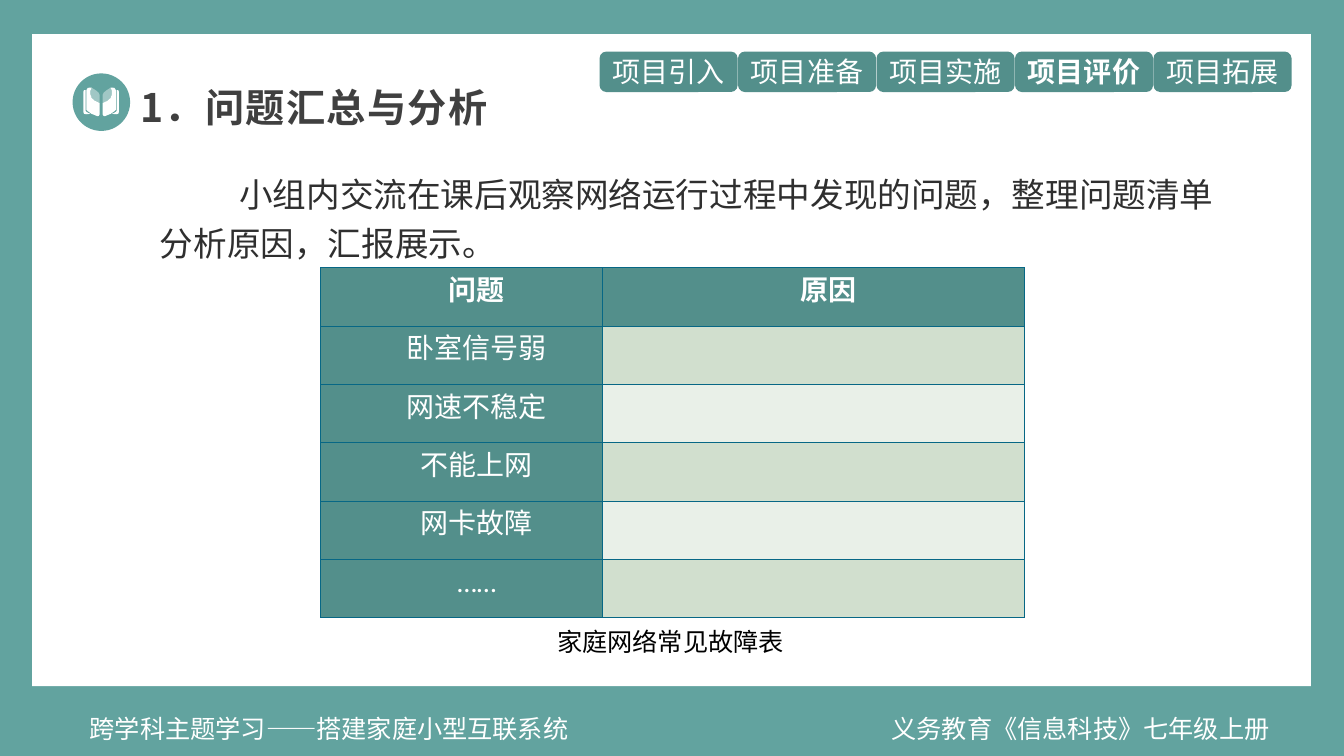
import pptx
import pptx.dml.color
import pptx.enum.shapes
import pptx.enum.text
import pptx.oxml
import pptx.oxml.ns
import pptx.util
from pptx.util import Cm

COLORS = {
    "frame": "62A39F", "tab": "538F8B", "white": "FFFFFF", "title": "404040",
    "body": "2F2F2F", "black": "000000", "border": "076785",
    "band_dark": "D1DFCE", "band_light": "E9F0E8",
}
SANS = "Noto Sans CJK SC"
NAMESPACE = pptx.oxml.ns.nsdecls("a")
ALIGN = pptx.enum.text.PP_ALIGN
ANCHOR = pptx.enum.text.MSO_ANCHOR
AUTO_SIZE = pptx.enum.text.MSO_AUTO_SIZE
SHAPE = pptx.enum.shapes.MSO_SHAPE

STAGES = ["项目引入", "项目准备", "项目实施", "项目评价", "项目拓展"]
CURRENT_STAGE = "项目评价"
ROWS = ["问题", "卧室信号弱", "网速不稳定", "不能上网", "网卡故障", "……"]

# Right half of the book icon, in cm from the centre of its badge
BADGE_CENTER = (2.55, 2.57)
BOOK_PAGE = [(.04, .03), (.04, .32), (.06, .35), (.09, .36), (.24, .3),
             (.34, .23), (.37, .2), (.37, -.3), (.34, -.35), (.3, -.36),
             (.24, -.36), (.27, -.28), (.27, -.19), (.24, -.1), (.16, -.03)]
BOOK_COVER = [(.37, .25), (.32, .28), (.27, .3), (.38, .31), (.43, .3),
              (.45, .25), (.45, -.25), (.43, -.3), (.39, -.3), (.39, .23)]
BOOK_LEAF = [(.24, -.36), (.13, -.29), (.06, -.23), (.04, -.18), (.04, .03),
             (.16, -.03), (.24, -.1), (.27, -.19), (.27, -.28)]


def rgb(name):
    return pptx.dml.color.RGBColor.from_string(COLORS[name])


def set_attributes(target, values):
    for name, value in values.items():
        setattr(target, name, value)


def write_text(frame, text, size, color, bold=False, font=SANS, indent=0,
               **paragraph_format):
    paragraph = frame.paragraphs[0]
    set_attributes(paragraph, paragraph_format)
    if indent:
        properties = paragraph._p.get_or_add_pPr()
        properties.set("marL", "0")
        properties.set("indent", str(Cm(indent)))
    run = paragraph.add_run()
    run.text = text
    set_attributes(run.font, {"size": pptx.util.Pt(size), "bold": bold, "name": font})
    run.font.color.rgb = rgb(color)
    latin = run.font._element.find(pptx.oxml.ns.qn("a:latin"))
    latin.addnext(pptx.oxml.parse_xml(f'<a:ea {NAMESPACE} typeface="{font}"/>'))
    return run


def paint(shape, color):
    shape.shadow.inherit = False
    shape.fill.solid()
    shape.fill.fore_color.rgb = rgb(color)
    shape.line.fill.background()


def add_block(shapes, kind, box, color):
    shape = shapes.add_shape(kind, *map(Cm, box))
    paint(shape, color)
    return shape


def add_label(slide, box, text, size, color, wrap=True, **text_format):
    frame = slide.shapes.add_textbox(*map(Cm, box)).text_frame
    set_attributes(frame, {"word_wrap": wrap, "auto_size": AUTO_SIZE.SHAPE_TO_FIT_TEXT})
    write_text(frame, text, size, color, **text_format)


def add_title(slide, text):
    title = slide.shapes.title
    set_attributes(title, {"left": Cm(2.74), "top": Cm(1.96),
                           "width": Cm(10.34), "height": Cm(1.45)})
    set_attributes(title.text_frame, {"vertical_anchor": ANCHOR.TOP, "word_wrap": True,
                                      "auto_size": AUTO_SIZE.NONE})
    run = write_text(title.text_frame, text, 28, "title", bold=True, alignment=ALIGN.CENTER)
    run.font._element.set("spc", "100")


def add_stage_tabs(slide):
    for index, stage in enumerate(STAGES):
        box = (15.11 + index * 3.49, 1.3, 3.48, 1.02)
        frame = add_block(slide.shapes, SHAPE.ROUNDED_RECTANGLE, box, "tab").text_frame
        frame.vertical_anchor = ANCHOR.MIDDLE
        write_text(frame, stage, 20, "white", bold=stage == CURRENT_STAGE,
                   alignment=ALIGN.CENTER)


def add_mirrored_outline(shapes, points):
    """Draw an outline on both sides of the badge centre as one freeform."""
    center_x, center_y = BADGE_CENTER
    builder = None
    for side in (1, -1):
        outline = [(Cm(center_x + side * x), Cm(center_y + y)) for x, y in points]
        if builder is None:
            builder = shapes.build_freeform(*outline[0])
        else:
            builder.move_to(*outline[0])
        builder.add_line_segments(outline[1:], close=True)
    shape = builder.convert_to_shape()
    paint(shape, "white")
    return shape


def add_book_badge(slide):
    shapes = slide.shapes.add_group_shape().shapes
    add_block(shapes, SHAPE.OVAL, (1.83, 1.85, 1.45, 1.45), "frame")
    add_mirrored_outline(shapes, BOOK_PAGE)
    add_mirrored_outline(shapes, BOOK_COVER)
    leaf = add_mirrored_outline(shapes, BOOK_LEAF)
    color = leaf.element.spPr.find(".//" + pptx.oxml.ns.qn("a:srgbClr"))
    color.append(pptx.oxml.parse_xml(f'<a:alpha {NAMESPACE} val="40000"/>'))


def format_cell(cell, color):
    set_attributes(cell, {"margin_left": Cm(0.3), "margin_right": Cm(0.3), "margin_top": 0,
                          "margin_bottom": 0, "vertical_anchor": ANCHOR.MIDDLE})
    for side in "LRTB":
        cell._tc.get_or_add_tcPr().append(pptx.oxml.parse_xml(
            f'<a:ln{side} {NAMESPACE} w="12700"><a:solidFill>'
            f'<a:srgbClr val="{COLORS["border"]}"/></a:solidFill></a:ln{side}>'))
    cell.fill.solid()
    cell.fill.fore_color.rgb = rgb(color)


def add_problem_table(slide):
    box = map(Cm, (8.08, 6.75, 17.73, 8.82))
    table = slide.shapes.add_table(len(ROWS), 2, *box).table
    set_attributes(table, {"first_row": False, "horz_banding": False})
    for column, width in zip(table.columns, (7.11, 10.62)):
        column.width = Cm(width)
    for index, problem in enumerate(ROWS):
        table.rows[index].height = Cm(1.47)
        is_header = index == 0
        band = "tab" if is_header else ("band_light", "band_dark")[index % 2]
        texts = (problem, "原因" if is_header else "")
        for column, (text, color) in enumerate(zip(texts, ("tab", band))):
            cell = table.cell(index, column)
            format_cell(cell, color)
            if text:
                write_text(cell.text_frame, text, 20, "white", bold=is_header,
                           font="Calibri", indent=0.76, alignment=ALIGN.CENTER,
                           line_spacing=pptx.util.Pt(15.6))


def main():
    presentation = pptx.Presentation()
    set_attributes(presentation, {"slide_width": Cm(33.87), "slide_height": Cm(19.05)})
    slide = presentation.slides.add_slide(presentation.slide_layouts.get_by_name("Title Only"))
    slide.background.fill.solid()
    slide.background.fill.fore_color.rgb = rgb("frame")

    panel = add_block(slide.shapes, SHAPE.RECTANGLE, (0.81, 0.86, 32.23, 16.43), "white")
    slide.shapes.title.element.addprevious(panel.element)
    add_label(slide, (22.22, 17.86, 10.49, 1.02), "义务教育《信息科技》七年级上册", 18, "white")
    add_label(slide, (2.01, 17.86, 12.7, 1.02), "跨学科主题学习——搭建家庭小型互联系统",
              18, "white", wrap=False)
    add_stage_tabs(slide)
    add_title(slide, "1．问题汇总与分析")
    add_label(slide, (3.78, 4.06, 27.25, 2.62),
              "小组内交流在课后观察网络运行过程中发现的问题，整理问题清单分析原因，汇报展示。",
              24, "body", indent=2, line_spacing=1.2)
    add_book_badge(slide)
    add_problem_table(slide)
    add_label(slide, (13.79, 15.65, 6.27, 1.02), "家庭网络常见故障表", 18, "black", wrap=False)
    presentation.save("out.pptx")


if __name__ == "__main__":
    main()
